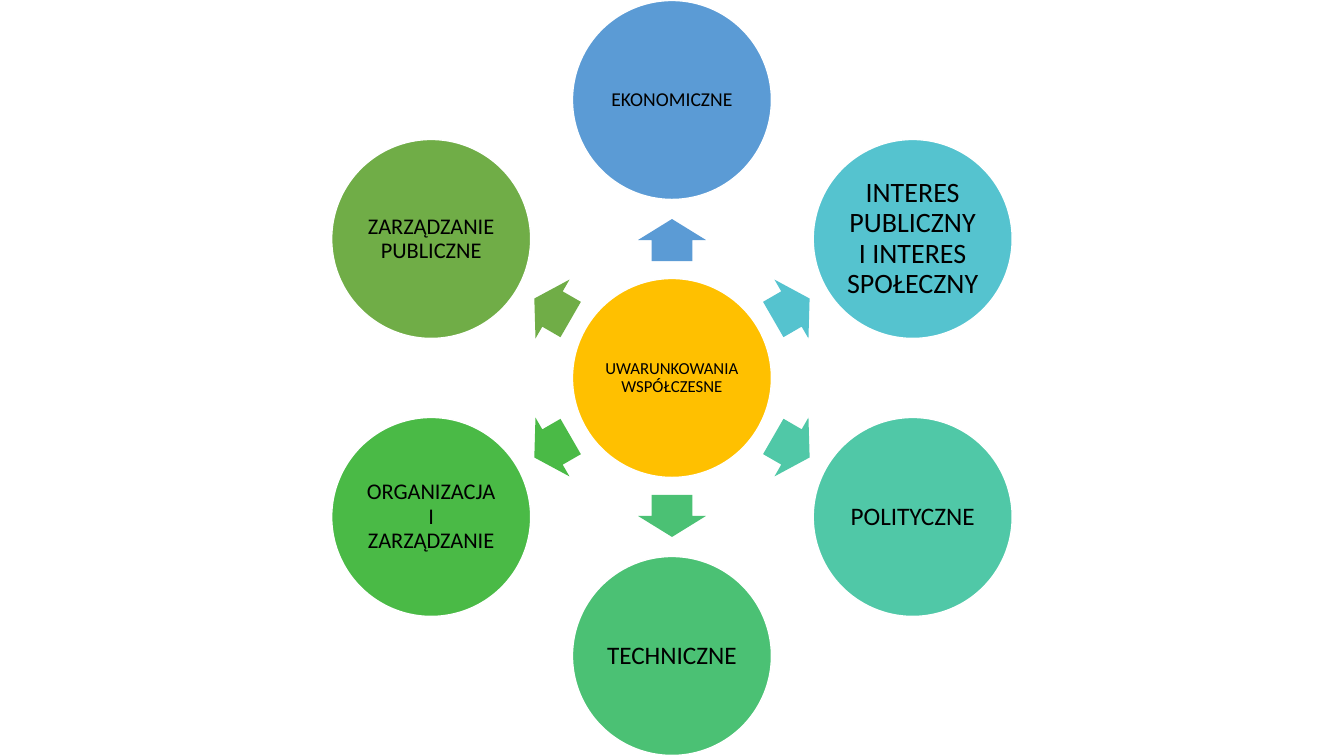
import math

from pptx import Presentation
from pptx import util as u
from pptx.dml.color import RGBColor
from pptx.enum import shapes, text

PX_PER_INCH = 100.8
WIDTH, HEIGHT = 1344, 756
CENTER_X, CENTER_Y = WIDTH // 2, HEIGHT // 2
CIRCLE_SIZE = 199
ARROW_LENGTH, ARROW_WIDTH = 42, 68
CIRCLE_ORBIT, ARROW_ORBIT = 278, 138

CONDITIONS = [
    ("EKONOMICZNE", "5B9BD5", 14),
    ("INTERES PUBLICZNY I INTERES SPOŁECZNY", "55C3CF", 20),
    ("POLITYCZNE", "50C8A7", 18),
    ("TECHNICZNE", "4BC174", 18),
    ("ORGANIZACJA I ZARZĄDZANIE", "4ABA46", 16),
    ("ZARZĄDZANIE PUBLICZNE", "70AD47", 16),
]


def px(length):
    return u.Inches(length / PX_PER_INCH)


def color(value):
    return RGBColor.from_string(value)


def apply(target, values):
    for name, value in values.items():
        setattr(target, name, value)


class RadialDiagram:
    """Draws the circles and arrows of a radial diagram on one slide."""

    font = {"name": "Calibri"}
    paragraph = {"alignment": text.PP_ALIGN.CENTER, "line_spacing": 0.9}
    frame = {"word_wrap": True, "vertical_anchor": text.MSO_ANCHOR.MIDDLE}
    margins = ("margin_left", "margin_top", "margin_right", "margin_bottom")

    def __init__(self, slide):
        self.slide = slide

    def shape(self, kind, angle, orbit, width, height, fill):
        x = CENTER_X + orbit * math.cos(math.radians(angle))
        y = CENTER_Y + orbit * math.sin(math.radians(angle))
        shape = self.slide.shapes.add_shape(
            kind, px(x - width / 2), px(y - height / 2), px(width), px(height))
        shape.shadow.inherit = False
        shape.fill.solid()
        shape.fill.fore_color.rgb = color(fill)
        return shape

    def circle(self, label, fill, size, angle=0, orbit=0):
        shape = self.shape(shapes.MSO_SHAPE.OVAL, angle, orbit,
                           CIRCLE_SIZE, CIRCLE_SIZE, fill)
        shape.line.color.rgb = color("FFFFFF")
        shape.line.width = u.Pt(1)
        inset = px(3 if size >= 18 else 2)
        apply(shape.text_frame, {**self.frame, **dict.fromkeys(self.margins, inset)})
        paragraph = shape.text_frame.paragraphs[0]
        apply(paragraph, self.paragraph)
        run = paragraph.add_run()
        run.text = label
        apply(run.font, {**self.font, "size": u.Pt(size)})
        run.font.color.rgb = color("000000")

    def arrow(self, fill, angle):
        shape = self.shape(shapes.MSO_SHAPE.RIGHT_ARROW, angle, ARROW_ORBIT,
                           ARROW_LENGTH, ARROW_WIDTH, fill)
        shape.rotation = angle % 360
        shape.adjustments[0] = 0.6
        shape.adjustments[1] = 0.5
        shape.line.fill.background()


def main():
    presentation = Presentation()
    apply(presentation, {"slide_width": px(WIDTH), "slide_height": px(HEIGHT)})
    slide = presentation.slides.add_slide(presentation.slide_layouts[6])
    diagram = RadialDiagram(slide)
    diagram.circle("UWARUNKOWANIA WSPÓŁCZESNE", "FFC000", 12)
    for index, (label, fill, size) in enumerate(CONDITIONS):
        angle = index * 360 / len(CONDITIONS) - 90
        diagram.arrow(fill, angle)
        diagram.circle(label, fill, size, angle, CIRCLE_ORBIT)
    presentation.save("out.pptx")


if __name__ == "__main__":
    main()
